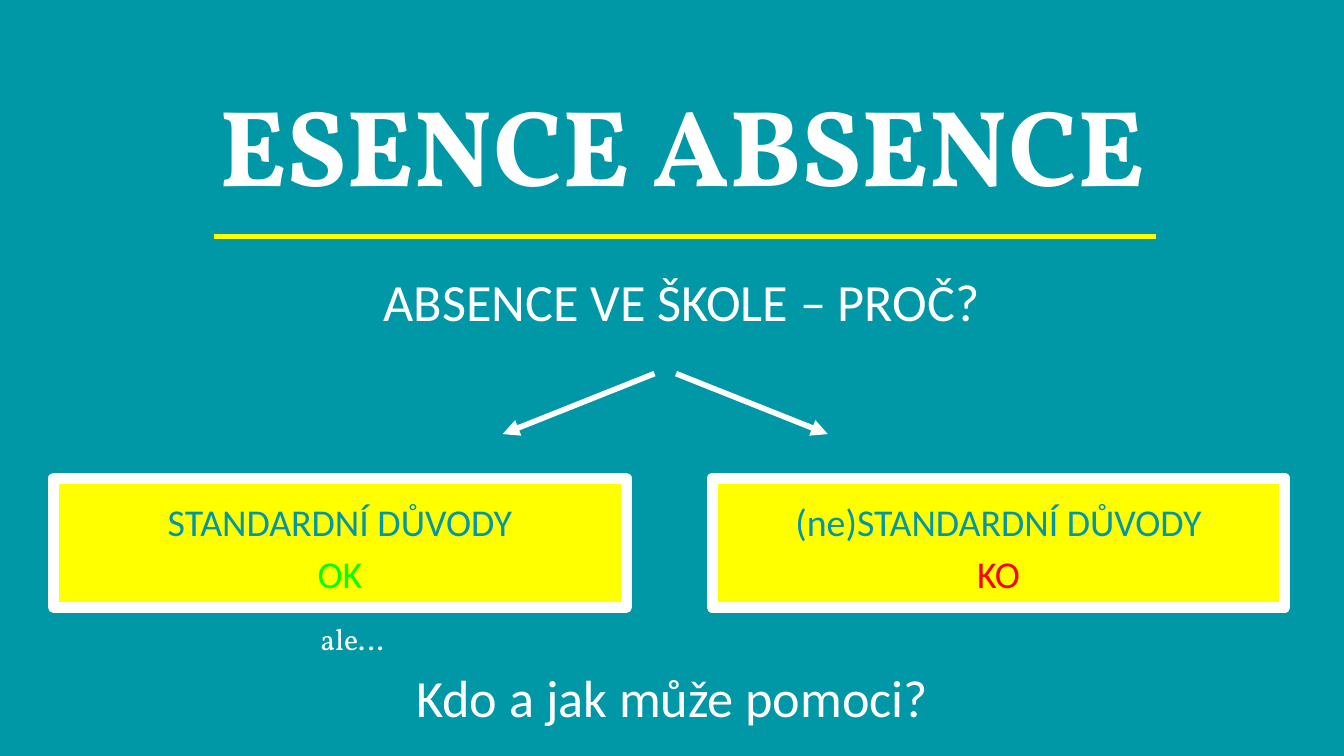
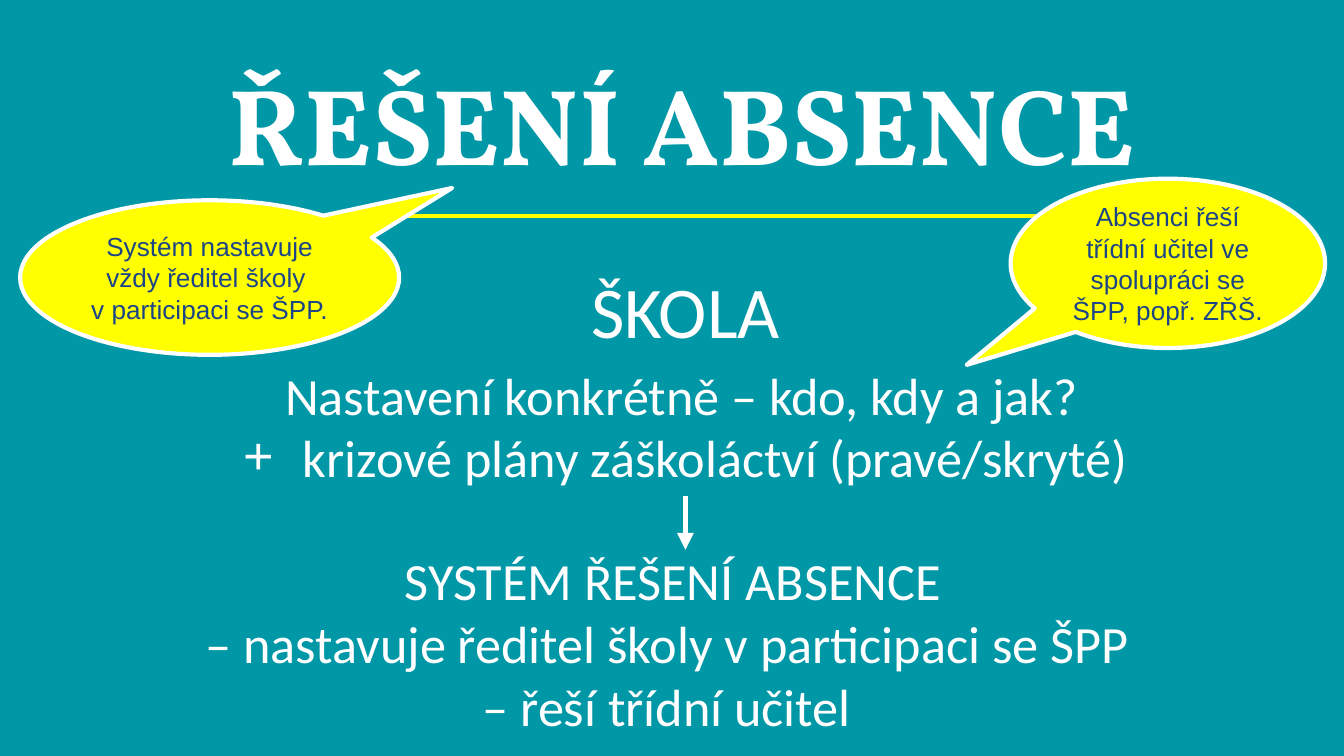
"""Builds two slides about school absence: its reasons and its solution."""
from lxml import etree
from pptx import Presentation, util as u
from pptx.dml.color import RGBColor
from pptx.enum import shapes, text
from pptx.oxml import ns

TEAL = RGBColor(0x00, 0x97, 0xA7)
WHITE = RGBColor(0xFF, 0xFF, 0xFF)
YELLOW = RGBColor(0xFF, 0xFF, 0x00)
GREEN = RGBColor(0x00, 0xFF, 0x00)
RED = RGBColor(0xFF, 0x00, 0x00)
NAVY = RGBColor(0x1C, 0x45, 0x87)
HEADING_FONT, BODY_FONT, PLAIN_FONT = "Vollkorn", "Calibri", "Arial"


def write_text(shape, lines, size, font=BODY_FONT, color=WHITE, anchor=text.MSO_ANCHOR.TOP):
    """Fill a shape with centred paragraphs; a newline is a line break."""
    frame = shape.text_frame
    frame.word_wrap = True
    frame.auto_size = text.MSO_AUTO_SIZE.NONE
    frame.vertical_anchor = anchor
    frame.margin_left = frame.margin_right = u.Inches(0.1)
    frame.margin_top = frame.margin_bottom = u.Inches(0.1)
    for index, line in enumerate(lines):
        paragraph = frame.add_paragraph() if index else frame.paragraphs[0]
        paragraph.alignment = text.PP_ALIGN.CENTER
        for part_index, part in enumerate(line.split("\n")):
            if part_index:
                paragraph.add_line_break()
            run = paragraph.add_run()
            run.text = part
            run.font.size = u.Pt(size)
            run.font.name = font
            run.font.color.rgb = color
    return frame.paragraphs


def draw_line(slide, start, end, color, width, arrow=False):
    """Draw a straight line, with an arrowhead at its end if wanted."""
    points = [u.Inches(value) for value in (*start, *end)]
    connector = slide.shapes.add_connector(shapes.MSO_CONNECTOR.STRAIGHT, *points)
    connector.line.color.rgb = color
    connector.line.width = u.Pt(width)
    if arrow:
        etree.SubElement(connector.line._get_or_add_ln(), ns.qn("a:tailEnd"), type="triangle")
    etree.SubElement(connector._element.spPr, ns.qn("a:effectLst"))


presentation = Presentation()
presentation.slide_width = u.Inches(10)
presentation.slide_height = u.Inches(10 * 9 / 16)

slides = []
for heading, title_top, rule_left, rule_top in [
    ("ESENCE ABSENCE", 0.62, 1.59, 1.76),
    ("ŘEŠENÍ ABSENCE", 0.46, 1.64, 1.61),
]:
    slide = presentation.slides.add_slide(presentation.slide_layouts[5])
    slide.background.fill.solid()
    slide.background.fill.fore_color.rgb = TEAL
    title = slide.shapes.title
    title.left, title.top = u.Inches(1.4), u.Inches(title_top)
    title.width, title.height = u.Inches(7.35), u.Inches(1.03)
    paragraph = write_text(title, [heading], 58, HEADING_FONT, anchor=text.MSO_ANCHOR.BOTTOM)[0]
    paragraph.space_before = u.Pt(10)
    paragraph.runs[0].font.bold = True
    draw_line(slide, (rule_left, rule_top), (rule_left + 7.01, rule_top), YELLOW, 2.25)
    slides.append(slide)
reasons, solution = slides

for slide, area, lines, size, font in [
    (reasons, (1.76, 1.9, 6.62, 0.72), ["ABSENCE VE ŠKOLE – PROČ?"], 28, BODY_FONT),
    (reasons, (2.06, 4.52, 1.12, 0.47), ["ale…"], 16, HEADING_FONT),
    (reasons, (1.69, 4.85, 6.62, 0.72), ["Kdo a jak může pomoci?"], 28, BODY_FONT),
    (solution, (3.11, 1.88, 3.98, 0.77), ["ŠKOLA"], 39, BODY_FONT),
    (solution, (0.32, 3.98, 9.37, 0.77), [
        "SYSTÉM ŘEŠENÍ ABSENCE",
        "– nastavuje ředitel školy v participaci se ŠPP ",
        "– řeší třídní učitel ",
    ], 28, BODY_FONT),
]:
    box = slide.shapes.add_textbox(*map(u.Inches, area))
    write_text(box, lines, size, font)

for left, arrow_start, arrow_end, reason, verdict, verdict_color in [
    (0.4, 4.87, 3.74, "STANDARDNÍ DŮVODY", "OK", GREEN),
    (5.3, 5.03, 6.16, "(ne)STANDARDNÍ DŮVODY", "KO", RED),
]:
    draw_line(reasons, (arrow_start, 2.78), (arrow_end, 3.23), WHITE, 3, arrow=True)
    area = map(u.Inches, (left, 3.56, 4.26, 0.96))
    panel = reasons.shapes.add_shape(shapes.MSO_SHAPE.RECTANGLE, *area)
    panel.shadow.inherit = False
    panel.fill.solid()
    panel.fill.fore_color.rgb = YELLOW
    panel.line.color.rgb = WHITE
    panel.line.width = u.Pt(6)
    paragraphs = write_text(panel, [reason, verdict], 20.3, color=TEAL)
    for paragraph in paragraphs:
        paragraph.line_spacing = 1.15
    paragraphs[0].space_before = u.Pt(10)
    paragraphs[1].runs[0].font.color.rgb = verdict_color

plan = solution.shapes.add_textbox(*map(u.Inches, (1.59, 2.6, 6.96, 0.77)))
paragraphs = write_text(plan, [
    "Nastavení konkrétně – kdo, kdy a jak?",
    "krizové plány záškoláctví (pravé/skryté)",
], 28)
properties = paragraphs[1]._p.get_or_add_pPr()
properties.set("marL", str(u.Inches(0.5)))
properties.set("indent", str(u.Inches(-0.44)))
bullet_color = etree.SubElement(properties, ns.qn("a:buClr"))
etree.SubElement(bullet_color, ns.qn("a:srgbClr"), val=str(WHITE))
etree.SubElement(properties, ns.qn("a:buFont"), typeface=PLAIN_FONT)
etree.SubElement(properties, ns.qn("a:buChar"), char="+")
draw_line(solution, (5.1, 3.69), (5.1, 4.09), WHITE, 3, arrow=True)

for area, pointer, message in [
    ((0.15, 1.49, 2.82, 1.15), (0.64, -0.58),
     "Systém nastavuje vždy ředitel školy \nv participaci se ŠPP. "),
    ((7.52, 1.33, 2.34, 1.26), (-0.64, 0.6),
     "Absenci řeší třídní učitel ve spolupráci se ŠPP, popř. ZŘŠ."),
]:
    callout = solution.shapes.add_shape(shapes.MSO_SHAPE.OVAL_CALLOUT, *map(u.Inches, area))
    callout.adjustments[0], callout.adjustments[1] = pointer
    callout.shadow.inherit = False
    callout.fill.solid()
    callout.fill.fore_color.rgb = YELLOW
    callout.line.color.rgb = WHITE
    callout.line.width = u.Pt(2.25)
    write_text(callout, [message], 14, PLAIN_FONT, NAVY, text.MSO_ANCHOR.MIDDLE)

presentation.save("out.pptx")
